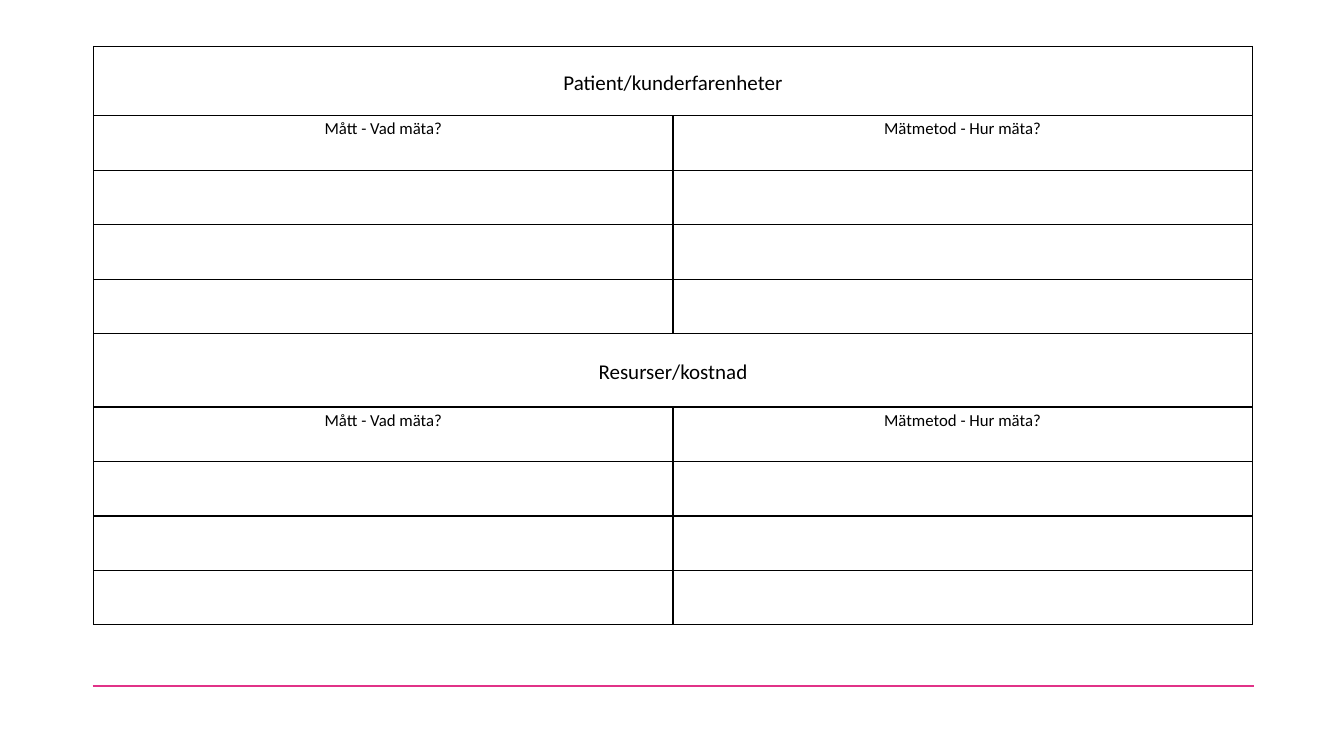
"""Build a slide with a measurement planning table in two sections."""
import pptx
import pptx.dml.color
import pptx.enum.shapes
import pptx.enum.text
import pptx.oxml
import pptx.oxml.ns
import pptx.util

SECTIONS = [("Patient/kunderfarenheter", 0.69), ("Resurser/kostnad", 0.73)]
HEADINGS = ["Mått - Vad mäta?", "Mätmetod - Hur mäta?"]
EMPTY_ROWS = 3
ROW_HEIGHT = 0.54
SECTION_ROWS = 2 + EMPTY_ROWS
LEFT, TOP, WIDTH = 0.93, 0.46, 11.49
RULE_LEFT, RULE_RIGHT, RULE_Y = 0.92, 12.44, 6.81
FONT = "Calibri"
BLACK = pptx.dml.color.RGBColor(0x00, 0x00, 0x00)
WHITE = pptx.dml.color.RGBColor(0xFF, 0xFF, 0xFF)
PINK = pptx.dml.color.RGBColor(0xE1, 0x32, 0x88)

inches = pptx.util.Inches


def style_cell(cell):
    """Give a cell a white fill, thin black borders and narrow margins."""
    cell.margin_left = cell.margin_right = inches(0.07)
    cell.margin_top = cell.margin_bottom = 0
    properties = cell._tc.get_or_add_tcPr()
    for side in ("lnL", "lnR", "lnT", "lnB"):
        properties.append(pptx.oxml.parse_xml(
            f'<a:{side} {pptx.oxml.ns.nsdecls("a")} w="12700"><a:solidFill>'
            f'<a:srgbClr val="{BLACK}"/></a:solidFill></a:{side}>'))
    cell.fill.solid()
    cell.fill.fore_color.rgb = WHITE


def write_cell(cell, text, size, anchor):
    """Write centred text in a cell."""
    cell.vertical_anchor = anchor
    para = cell.text_frame.paragraphs[0]
    para.alignment = pptx.enum.text.PP_ALIGN.CENTER
    para.line_spacing = 1.15
    span = para.add_run()
    span.text = text
    span.font.name = FONT
    span.font.size = pptx.util.Pt(size)
    span.font.color.rgb = BLACK


def add_measure_table(page):
    """Add the table with its sections, headings and empty rows."""
    heights = [height for _, first in SECTIONS
               for height in [first] + [ROW_HEIGHT] * (SECTION_ROWS - 1)]
    table = page.shapes.add_table(
        len(heights), len(HEADINGS), inches(LEFT), inches(TOP),
        inches(WIDTH), inches(sum(heights))).table
    table.first_row = table.horz_banding = False
    for row, height in zip(table.rows, heights):
        row.height = inches(height)
    for cell in table.iter_cells():
        style_cell(cell)
    for index, (title, _) in enumerate(SECTIONS):
        start = index * SECTION_ROWS
        title_cell = table.cell(start, 0)
        title_cell.merge(table.cell(start, len(HEADINGS) - 1))
        write_cell(title_cell, title, 15, pptx.enum.text.MSO_ANCHOR.MIDDLE)
        for column, heading in enumerate(HEADINGS):
            write_cell(table.cell(start + 1, column), heading, 12,
                       pptx.enum.text.MSO_ANCHOR.TOP)


def add_footer_rule(page):
    """Add the pink line below the table."""
    rule = page.shapes.add_connector(
        pptx.enum.shapes.MSO_CONNECTOR.STRAIGHT, inches(RULE_LEFT),
        inches(RULE_Y), inches(RULE_RIGHT), inches(RULE_Y))
    rule.line.color.rgb = PINK
    rule.line.width = pptx.util.Pt(1.5)
    rule._element.spPr.append(pptx.oxml.parse_xml(
        f'<a:effectLst {pptx.oxml.ns.nsdecls("a")}/>'))


def main():
    """Create the deck and save it."""
    deck = pptx.Presentation()
    deck.slide_width, deck.slide_height = inches(13.33), inches(7.5)
    page = deck.slides.add_slide(deck.slide_layouts[6])
    add_footer_rule(page)
    add_measure_table(page)
    deck.save("out.pptx")


if __name__ == "__main__":
    main()
